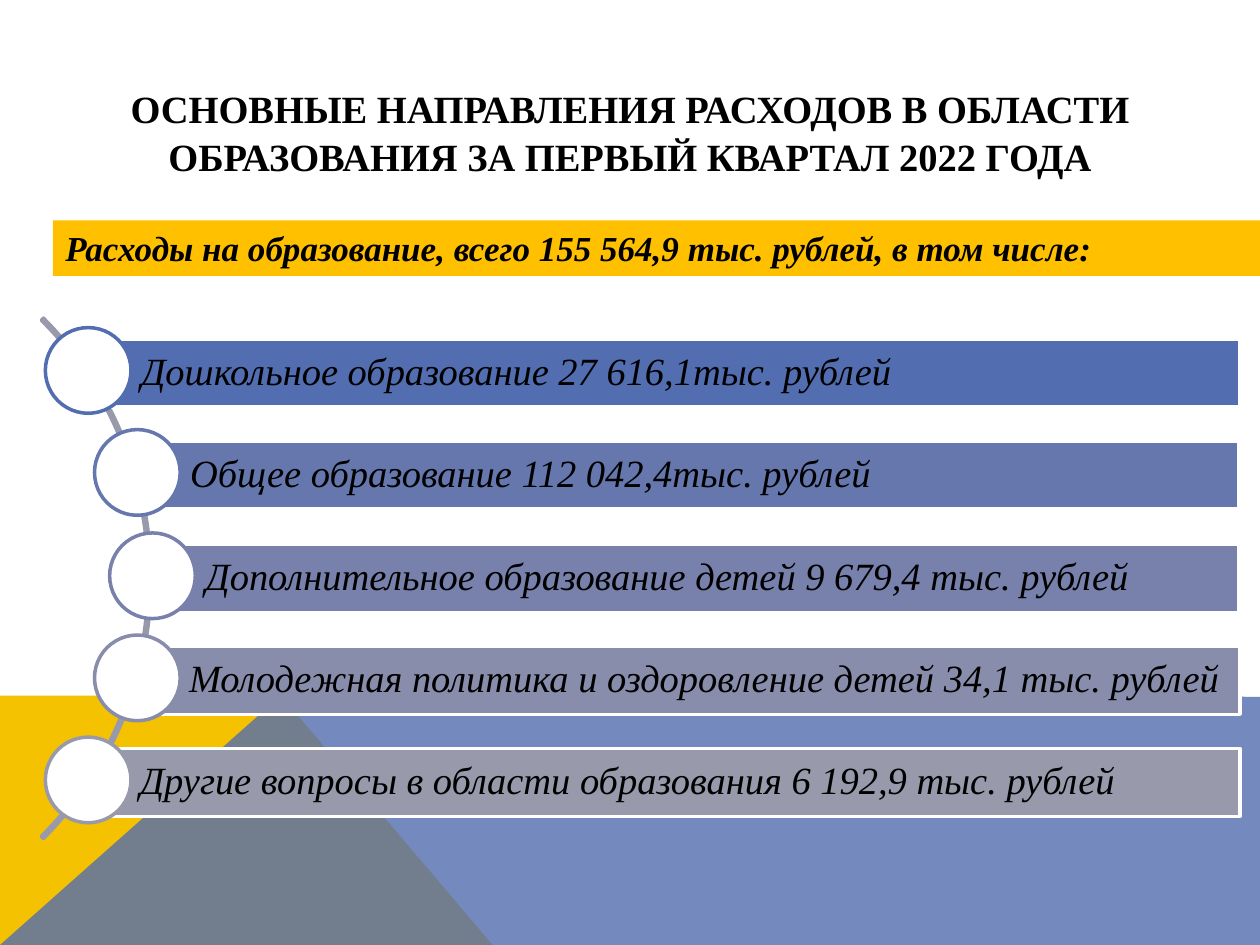
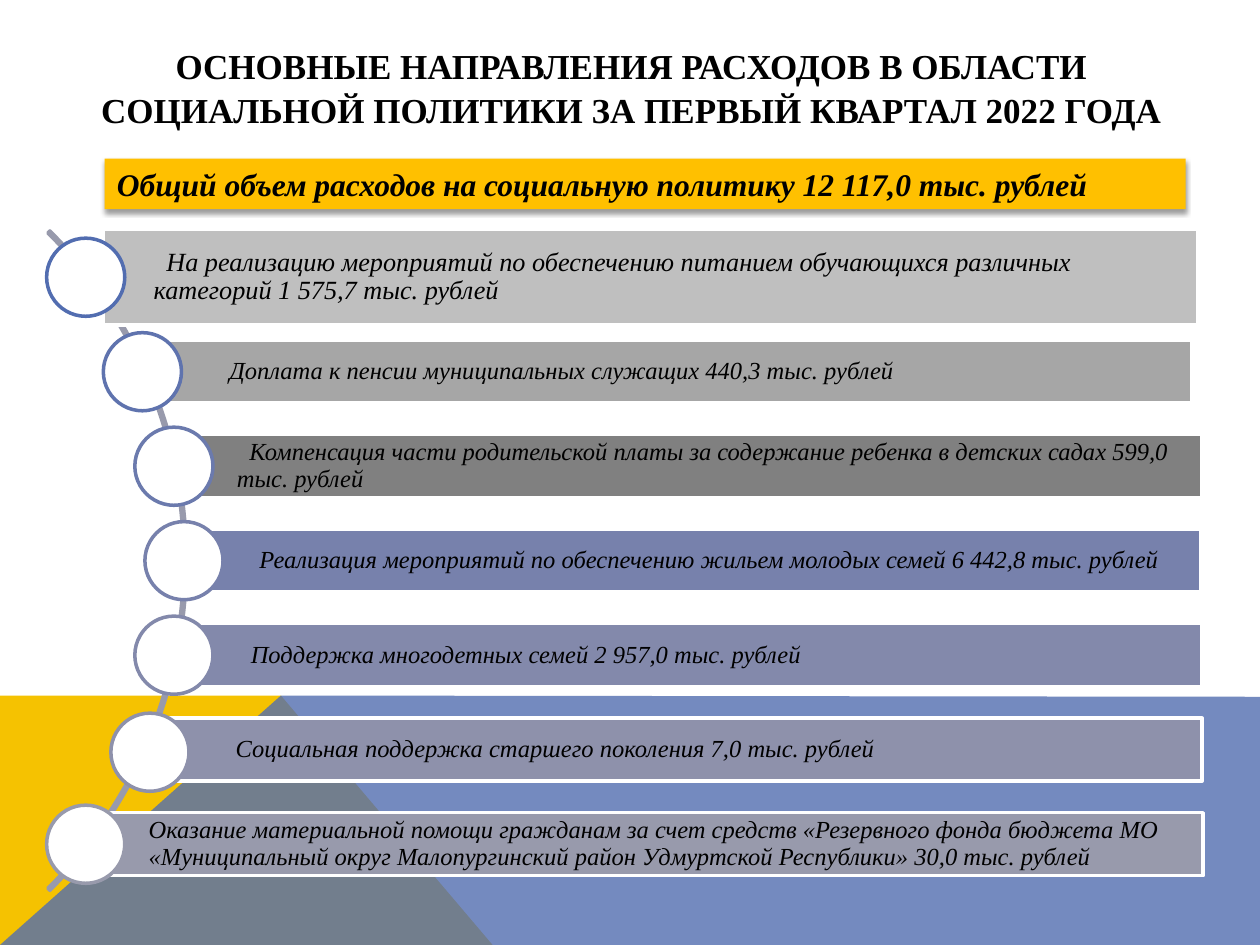
import dataclasses

import lxml.etree
import pptx
import pptx.dml.color
import pptx.enum.shapes
import pptx.enum.text
import pptx.oxml.ns
import pptx.util

PX = 9144  # EMU; 100 px to the inch
SLIDE_WIDTH, SLIDE_HEIGHT = 1000, 750
FONT = "Times New Roman"
LINE_WIDTH = pptx.util.Pt(2)
SHAPES = pptx.enum.shapes.MSO_SHAPE
ALIGN = pptx.enum.text.PP_ALIGN
ANCHOR = pptx.enum.text.MSO_ANCHOR

COLOURS = {
    "text": "000000",
    "white": "FFFFFF",
    "banner": "FFC000",
    "yellow": "F5C201",
    "blue": "526DB0",
    "blue_2": "5F73AE",
    "blue_3": "6577AD",
    "blue_4": "6B7AAD",
    "violet": "7781AC",
    "violet_2": "8389AB",
    "violet_3": "888DAB",
    "violet_4": "8E91AB",
    "grey_blue": "989AAC",
    "light_grey": "BFBFBF",
    "mid_grey": "A6A6A6",
    "dark_grey": "808080",
}


@dataclasses.dataclass(frozen=True)
class Box:
    left: int
    top: int
    width: int
    height: int

    def emu(self) -> tuple[int, ...]:
        return tuple(side * PX for side in dataclasses.astuple(self))


@dataclasses.dataclass(frozen=True)
class Expense:
    text: str
    left: int
    right: int
    circle_left: int
    circle_colour: str
    bar_colour: str = ""  # the circle colour when empty
    indent: int = 10
    bar_height: int = 0  # the height shared by the list when zero
    size: int = 0  # the size shared by the list when zero
    circle_drop: int = 0


@dataclasses.dataclass(frozen=True)
class ExpenseList:
    """Bars at an equal step along an arc, each headed by a circle."""
    arc: Box
    arc_thickness: float
    top: int
    step: float
    bar_height: int
    circle: int
    circle_lift: int
    inset_left: int
    inset: int
    size: int
    expenses: tuple[Expense, ...]


@dataclasses.dataclass(frozen=True)
class Page:
    title: str
    title_box: Box
    title_size: int
    banner: str
    banner_box: Box
    banner_size: int
    banner_shadow: bool
    expense_list: ExpenseList


EDUCATION = Page(
    "ОСНОВНЫЕ НАПРАВЛЕНИЯ РАСХОДОВ В ОБЛАСТИ ОБРАЗОВАНИЯ ЗА ПЕРВЫЙ КВАРТАЛ 2022 ГОДА",
    Box(25, 50, 950, 108), 22,
    "Расходы на образование, всего 155 564,9 тыс. рублей, в том числе:",
    Box(42, 175, 958, 44), 20, False,
    ExpenseList(
        Box(-464, 167, 584, 584), 0.004, 269, 81.25, 54, 68, 9, 43, 6, 22,
        (
            Expense("Дошкольное образование 27 616,1тыс. рублей",
                    54, 984, 36, "blue", indent=15),
            Expense("Общее образование 112 042,4тыс. рублей",
                    93, 983, 75, "blue_3", indent=15),
            Expense("Дополнительное образование детей 9 679,4 тыс. рублей",
                    105, 983, 87, "violet", indent=15),
            Expense("Молодежная политика и оздоровление детей 34,1 тыс. рублей",
                    92, 984, 75, "violet_3", indent=15),
            Expense("Другие вопросы в области образования 6 192,9 тыс. рублей",
                    53, 984, 36, "grey_blue", indent=15),
        ),
    ),
)

SOCIAL_POLICY = Page(
    "ОСНОВНЫЕ НАПРАВЛЕНИЯ РАСХОДОВ В ОБЛАСТИ СОЦИАЛЬНОЙ ПОЛИТИКИ "
    "ЗА ПЕРВЫЙ КВАРТАЛ 2022 ГОДА",
    Box(26, 25, 950, 88), 20,
    "Общий объем расходов на социальную политику 12 117,0 тыс. рублей",
    Box(83, 126, 858, 40), 18, True,
    ExpenseList(
        Box(-592, 75, 740, 740), 0.003, 195, 75, 50, 62, 6, 40, 4, 14,
        (
            Expense("На реализацию мероприятий по обеспечению питанием обучающихся "
                    "различных категорий 1 575,7 тыс. рублей",
                    82, 951, 37, "blue", "light_grey", bar_height=76, size=15),
            Expense("Доплата к пенсии муниципальных служащих 440,3 тыс. рублей",
                    132, 946, 82, "blue_2", "mid_grey"),
            Expense("Компенсация части родительской платы за содержание ребенка "
                    "в детских садах 599,0 тыс. рублей",
                    148, 954, 107, "blue_4", "dark_grey"),
            Expense("Реализация мероприятий по обеспечению жильем молодых семей "
                    "6 442,8 тыс. рублей",
                    156, 953, 115, "violet"),
            Expense("Поддержка многодетных семей 2 957,0 тыс. рублей",
                    149, 954, 107, "violet_2"),
            Expense("Социальная поддержка старшего поколения 7,0 тыс. рублей",
                    132, 954, 88, "violet_4", indent=15, circle_drop=2),
            Expense("Оказание материальной помощи гражданам за счет средств "
                    "«Резервного фонда бюджета МО «Муниципальный округ "
                    "Малопургинский район Удмуртской Республики» 30,0 тыс. рублей",
                    78, 955, 37, "grey_blue", indent=0),
        ),
    ),
)


def rgb(name: str) -> pptx.dml.color.RGBColor:
    return pptx.dml.color.RGBColor.from_string(COLOURS[name])


def set_all(target, values: dict) -> None:
    for name, value in values.items():
        setattr(target, name, value)


def paint(shape, fill: str = "", line: str = "") -> None:
    shape.shadow.inherit = False
    if fill:
        shape.fill.solid()
        shape.fill.fore_color.rgb = rgb(fill)
    else:
        shape.fill.background()
    if line:
        shape.line.color.rgb = rgb(line)
        shape.line.width = LINE_WIDTH
    else:
        shape.line.fill.background()


def add_shape(slide, kind, box: Box, fill: str = "", line: str = ""):
    shape = slide.shapes.add_shape(kind, *box.emu())
    paint(shape, fill, line)
    return shape


def write(shape, text: str, size: int, frame_format: dict,
          paragraph_format: dict, font_format: dict, indent: int = 0) -> None:
    """Fill the shape with one paragraph; indent moves its first line only."""
    frame = shape.text_frame
    set_all(frame, {"word_wrap": True} | frame_format)
    paragraph = frame.paragraphs[0]
    set_all(paragraph, {"alignment": ALIGN.LEFT} | paragraph_format)
    if indent:
        paragraph._p.get_or_add_pPr().set("indent", str(indent * PX))
    run = paragraph.add_run()
    run.text = text
    set_all(run.font, {"name": FONT, "size": pptx.util.Pt(size)} | font_format)
    run.font.color.rgb = rgb("text")


def add_polygon(slide, points: list[tuple[int, int]], fill: str):
    builder = slide.shapes.build_freeform(*points[0], scale=PX)
    builder.add_line_segments(points[1:], close=True)
    polygon = builder.convert_to_shape()
    paint(polygon, fill)
    return polygon


def add_backdrop(slide) -> None:
    horizon, peak = 552, 223
    add_polygon(slide, [(0, SLIDE_HEIGHT), (0, horizon), (peak, horizon),
                        (391, SLIDE_HEIGHT)], "yellow")
    slope = add_polygon(slide, [(0, SLIDE_HEIGHT), (peak, horizon),
                                (SLIDE_WIDTH, horizon + 1),
                                (SLIDE_WIDTH, SLIDE_HEIGHT)], "blue")
    colour = next(slope._element.spPr.iter(pptx.oxml.ns.qn("a:srgbClr")))
    lxml.etree.SubElement(colour, pptx.oxml.ns.qn("a:alpha"), val="80000")


def add_drop_shadow(shape) -> None:
    qn = pptx.oxml.ns.qn
    effects = shape._element.spPr.find(qn("a:effectLst"))
    shadow = lxml.etree.SubElement(
        effects, qn("a:outerShdw"), blurRad=str(pptx.util.Pt(3.1)),
        dist=str(pptx.util.Pt(1.6)), dir="5400000", rotWithShape="0")
    colour = lxml.etree.SubElement(shadow, qn("a:srgbClr"), val=COLOURS["text"])
    lxml.etree.SubElement(colour, qn("a:alpha"), val="38000")


def add_expenses(slide, group: ExpenseList) -> None:
    arc = add_shape(slide, SHAPES.BLOCK_ARC, group.arc, line="grey_blue")
    for index, value in enumerate((189, 27, group.arc_thickness)):
        arc.adjustments[index] = value
    inset = group.inset * PX
    frame_format = {
        "margin_left": group.inset_left * PX, "margin_right": inset,
        "margin_top": inset, "margin_bottom": inset,
        "vertical_anchor": ANCHOR.MIDDLE,
    }
    for index, expense in enumerate(group.expenses):
        row_top = round(group.top + index * group.step)
        height = expense.bar_height or group.bar_height
        bar_box = Box(expense.left, row_top - (height - group.bar_height) // 2,
                      expense.right - expense.left, height)
        bar = add_shape(slide, SHAPES.RECTANGLE, bar_box,
                        expense.bar_colour or expense.circle_colour, "white")
        write(bar, expense.text, expense.size or group.size, frame_format,
              {"line_spacing": 0.9}, {"italic": True}, expense.indent)
        circle_top = row_top - group.circle_lift + expense.circle_drop
        add_shape(slide, SHAPES.OVAL,
                  Box(expense.circle_left, circle_top, group.circle, group.circle),
                  "white", expense.circle_colour)


def add_page(deck, page: Page) -> None:
    slide = deck.slides.add_slide(deck.slide_layouts[6])
    add_backdrop(slide)
    title = slide.shapes.add_textbox(*page.title_box.emu())
    write(title, page.title, page.title_size, {"vertical_anchor": ANCHOR.MIDDLE},
          {"alignment": ALIGN.CENTER, "line_spacing": 1.04}, {"bold": True})
    add_expenses(slide, page.expense_list)
    banner = add_shape(slide, SHAPES.RECTANGLE, page.banner_box, "banner")
    write(banner, page.banner, page.banner_size, {"vertical_anchor": ANCHOR.TOP},
          {}, {"bold": True, "italic": True})
    if page.banner_shadow:
        add_drop_shadow(banner)


def main() -> None:
    deck = pptx.Presentation()
    set_all(deck, {"slide_width": SLIDE_WIDTH * PX, "slide_height": SLIDE_HEIGHT * PX})
    for page in (EDUCATION, SOCIAL_POLICY):
        add_page(deck, page)
    deck.save("out.pptx")


if __name__ == "__main__":
    main()
